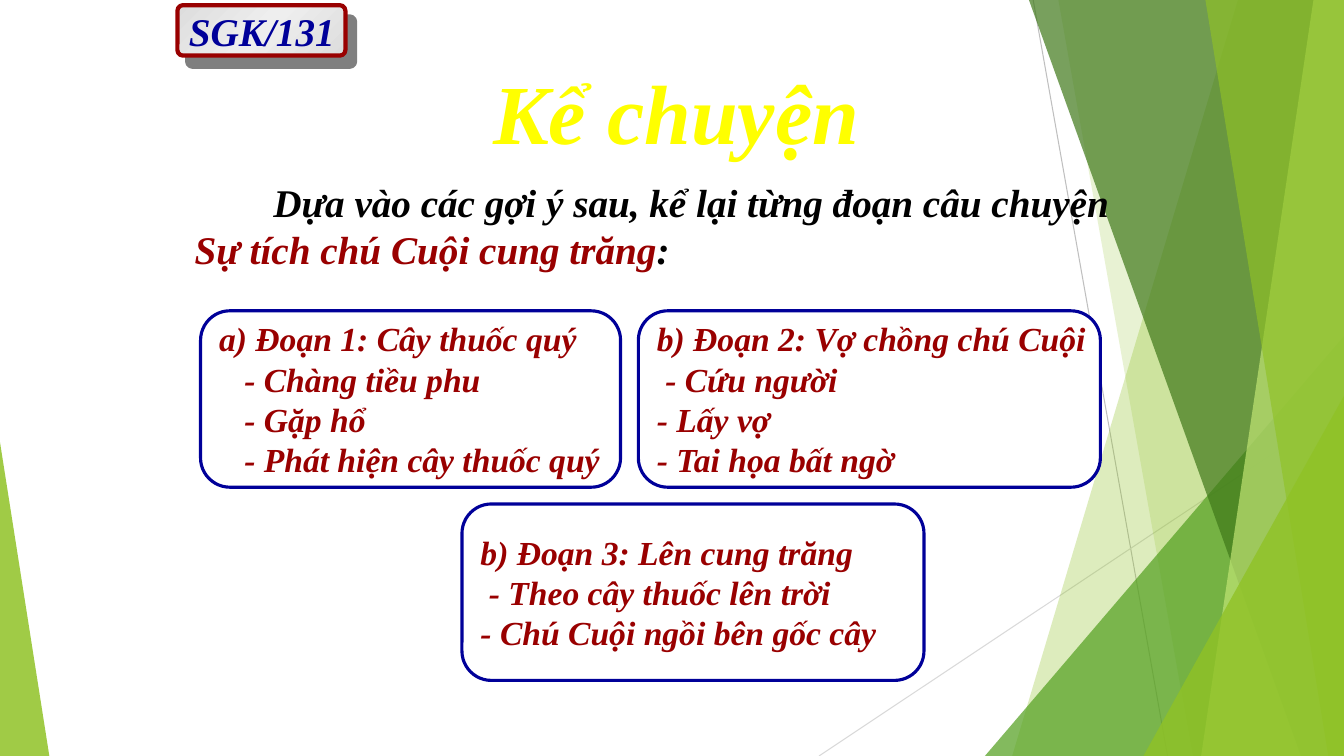
from dataclasses import dataclass
from typing import Optional

from lxml.etree import SubElement
from pptx import Presentation
from pptx.dml.color import RGBColor
from pptx.enum.shapes import MSO_CONNECTOR as Connector, MSO_SHAPE as Preset
from pptx.enum.text import MSO_ANCHOR as Anchor, MSO_AUTO_SIZE as AutoSize, PP_ALIGN as Align
from pptx.oxml import parse_xml
from pptx.oxml.ns import nsdecls, qn
from pptx.util import Pt

PX = 9525
WIDTH, HEIGHT = 1280, 720
FONT = "Times New Roman"
COLORS = {
    "white": "FFFFFF",
    "black": "000000",
    "navy": "000099",
    "maroon": "990000",
    "yellow": "FFFF00",
    "red": "FF0000",
    "silver": "DDDDDD",
    "pale": "EEEEEE",
    "grey": "BFBFBF",
    "mist": "D9D9D9",
    "lime": "90C226",
    "leaf": "54A021",
    "forest": "3F7819",
    "spring": "C0E474",
}


@dataclass(frozen=True)
class Box:
    left: int
    top: int
    width: int
    height: int

    def emu(self) -> tuple:
        return tuple(side * PX for side in (self.left, self.top, self.width, self.height))


@dataclass(frozen=True)
class Ray:
    start: tuple
    end: tuple
    color: str


@dataclass(frozen=True)
class Shard:
    top_x: int
    bottom_x: int
    color: str
    opacity: int


@dataclass(frozen=True)
class Corner:
    box: Box
    apex: int
    color: str
    opacity: int


@dataclass(frozen=True)
class Line:
    words: str
    inset: int = 0


@dataclass(frozen=True)
class Card:
    box: Box
    lines: tuple


RAYS = (
    Ray((984, 0), (1112, HEIGHT), "grey"),
    Ray((WIDTH, 387), (780, HEIGHT), "mist"),
)
FACETS = (
    Shard(1179, 964, "lime", 30),
    Shard(1008, 1136, "lime", 20),
    Corner(Box(938, 320, 342, 400), 1, "leaf", 72),
    Shard(980, 1239, "forest", 70),
    Shard(1251, 1144, "spring", 70),
    Shard(1148, 1265, "lime", 65),
    Corner(Box(1089, 377, 191, 343), 1, "lime", 80),
    Corner(Box(0, 421, 47, 299), 0, "lime", 85),
)
CARDS = (
    Card(Box(191, 296, 400, 168), (
        Line("a) Đoạn 1: Cây thuốc quý"),
        Line("- Chàng tiều phu", 24),
        Line("- Gặp hổ", 24),
        Line("- Phát hiện cây thuốc quý", 24),
    )),
    Card(Box(608, 296, 440, 168), (
        Line("b) Đoạn 2: Vợ chồng chú Cuội"),
        Line("- Cứu người", 8),
        Line("- Lấy vợ"),
        Line("- Tai họa bất ngờ"),
    )),
    Card(Box(440, 480, 440, 168), (
        Line("b) Đoạn 3: Lên cung trăng"),
        Line("- Theo cây thuốc lên trời", 8),
        Line("- Chú Cuội ngồi bên gốc cây"),
    )),
)
TASK = (
    ("Dựa vào các gợi ý sau, kể lại từng đoạn câu chuyện ", "black"),
    ("Sự tích chú Cuội cung trăng", "maroon"),
    (":", "black"),
)


def rgb(name: str) -> RGBColor:
    return RGBColor.from_string(COLORS[name])


def add_span(para, words: str, size: int, color: str):
    span = para.add_run()
    span.text = words
    font = span.font
    font.name, font.size, font.bold, font.italic = FONT, Pt(size), True, True
    font.color.rgb = rgb(color)
    return span


def indent(para, left: int, first: int = 0) -> None:
    props = para._p.get_or_add_pPr()
    props.set("marL", str(left * PX))
    props.set("indent", str(first * PX))


def paint(shape, color: str, opacity: int = 100, edge: Optional[str] = None, weight: float = 0) -> None:
    shape.shadow.inherit = False
    shape.fill.solid()
    shape.fill.fore_color.rgb = rgb(color)
    if opacity < 100:
        tint = shape._element.spPr.find(qn("a:solidFill"))[0]
        SubElement(tint, qn("a:alpha")).set("val", str(opacity * 1000))
    if edge is None:
        shape.line.fill.background()
    else:
        shape.line.color.rgb = rgb(edge)
        shape.line.width = Pt(weight)


def add_ray(page, ray: Ray) -> None:
    points = [value * PX for value in ray.start + ray.end]
    line = page.shapes.add_connector(Connector.STRAIGHT, *points)
    line.line.color.rgb = rgb(ray.color)
    line.line.width = Pt(0.75)
    SubElement(line._element.spPr, qn("a:effectLst"))


def add_facet(page, facet) -> None:
    if isinstance(facet, Shard):
        outline = page.shapes.build_freeform(facet.top_x, 0, scale=float(PX))
        outline.add_line_segments([(WIDTH, 0), (WIDTH, HEIGHT), (facet.bottom_x, HEIGHT)])
        shape = outline.convert_to_shape()
    else:
        shape = page.shapes.add_shape(Preset.ISOSCELES_TRIANGLE, *facet.box.emu())
        shape.adjustments[0] = facet.apex
    paint(shape, facet.color, facet.opacity)


def add_panel(page, preset, box: Box, lines: tuple, size: int, color: str, edge: str, weight: float):
    panel = page.shapes.add_shape(preset, *box.emu())
    paint(panel, "white", edge=edge, weight=weight)
    frame = panel.text_frame
    frame.word_wrap = False
    frame.vertical_anchor = Anchor.MIDDLE
    for index, line in enumerate(lines):
        para = frame.add_paragraph() if index else frame.paragraphs[0]
        para.alignment = Align.LEFT
        indent(para, line.inset)
        add_span(para, line.words, size, color)
    return panel


def add_badge(page) -> None:
    badge = add_panel(page, Preset.ROUNDED_RECTANGLE, Box(169, 5, 160, 48),
                      (Line("SGK/131"),), 28, "navy", "maroon", 3)
    badge.adjustments[0] = 0.11
    props = badge._element.spPr
    stops = "".join(f'<a:gs pos="{place}"><a:srgbClr val="{COLORS[name]}"/></a:gs>'
                    for place, name in ((0, "silver"), (50000, "pale"), (100000, "silver")))
    props.replace(props.find(qn("a:solidFill")), parse_xml(
        f'<a:gradFill {nsdecls("a")}><a:gsLst>{stops}</a:gsLst><a:lin ang="2700000"/></a:gradFill>'))
    shadow = SubElement(props.find(qn("a:effectLst")), qn("a:outerShdw"),
                        blurRad="0", dist=str(Pt(10.6)), dir=str(49 * 60000), algn="ctr", rotWithShape="0")
    tint = SubElement(shadow, qn("a:srgbClr"), val=COLORS["black"])
    SubElement(tint, qn("a:alpha"), val="50000")


def add_task(page) -> None:
    frame = page.shapes.add_textbox(*Box(176, 160, 904, 106).emu()).text_frame
    frame.word_wrap = True
    frame.margin_top = 10 * PX
    para = frame.paragraphs[0]
    indent(para, 0, 75)
    for words, color in TASK:
        add_span(para, words, 28, color)


def set_title(page) -> None:
    title = page.shapes.title
    title.left, title.top, title.width, title.height = Box(400, 53, 488, 89).emu()
    frame = title.text_frame
    frame.word_wrap = False
    frame.auto_size = AutoSize.NONE
    frame.vertical_anchor = Anchor.TOP
    para = frame.paragraphs[0]
    para.alignment = Align.CENTER
    span = add_span(para, "Kể chuyện", 60, "yellow")
    span._r.get_or_add_rPr().insert(0, parse_xml(
        f'<a:ln {nsdecls("a")} w="9525"><a:solidFill><a:srgbClr val="{COLORS["red"]}"/></a:solidFill></a:ln>'))


def main() -> None:
    deck = Presentation()
    deck.slide_width, deck.slide_height = WIDTH * PX, HEIGHT * PX
    page = deck.slides.add_slide(deck.slide_layouts[5])
    for ray in RAYS:
        add_ray(page, ray)
    for facet in FACETS:
        add_facet(page, facet)
    set_title(page)
    add_badge(page)
    add_task(page)
    for card in CARDS:
        add_panel(page, Preset.FLOWCHART_ALTERNATE_PROCESS, card.box, card.lines, 24, "maroon", "navy", 2.25)
    deck.save("out.pptx")


if __name__ == "__main__":
    main()
